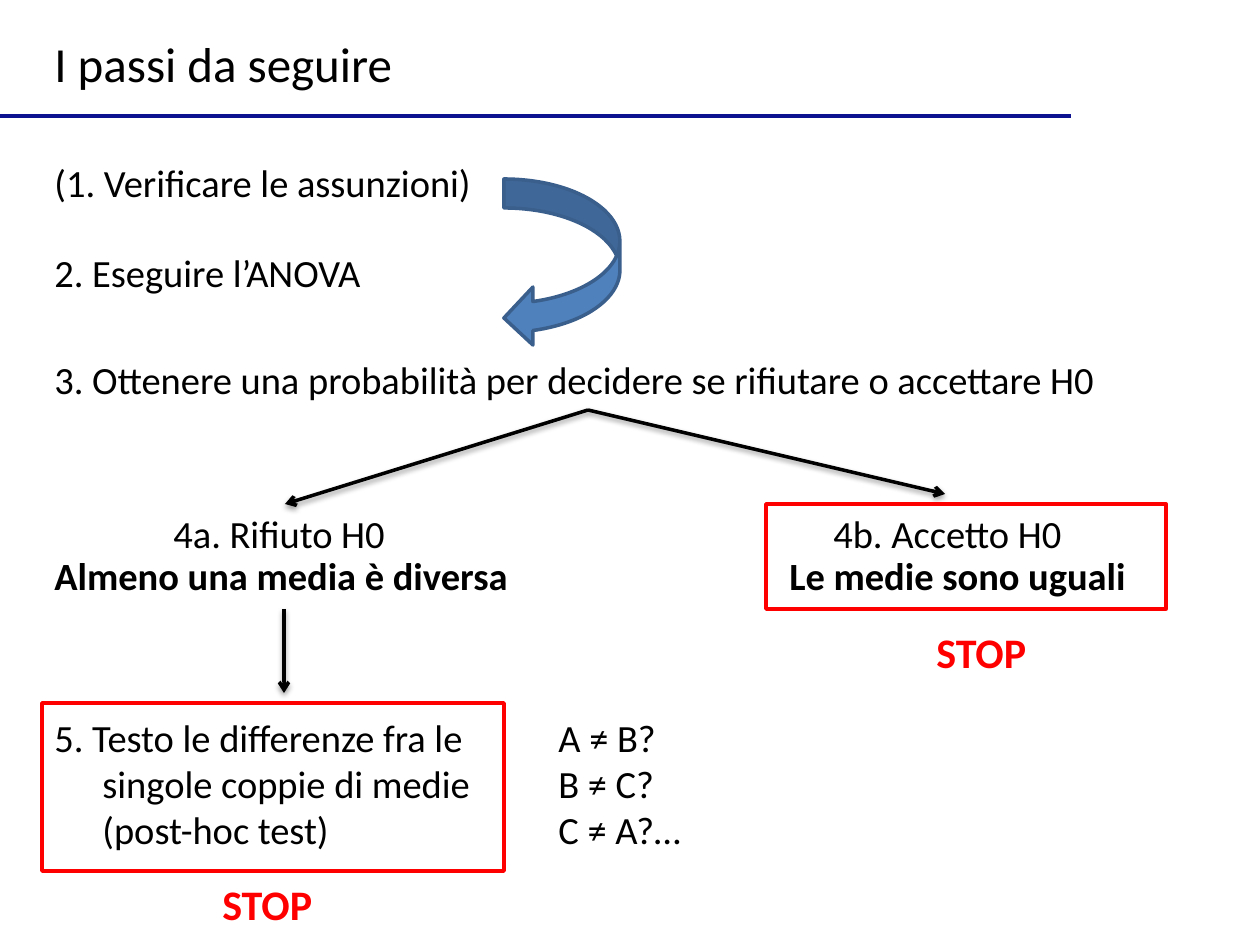
import pptx
import pptx.dml.color
import pptx.enum.shapes
import pptx.enum.text
import pptx.oxml
import pptx.util

PX = 914400 / 126
BLACK, RED, NAVY = "000000", "FF0000", "0C1290"
HANGING = 48
NAMESPACE = 'xmlns:a="http://schemas.openxmlformats.org/drawingml/2006/main"'
NO_EFFECT = f"<a:effectLst {NAMESPACE}/>"
SOFT_SHADOW = (
    f'<a:effectLst {NAMESPACE}>'
    '<a:outerShdw blurRad="40000" dist="20000" dir="5400000" rotWithShape="0">'
    '<a:srgbClr val="000000"><a:alpha val="38000"/></a:srgbClr>'
    '</a:outerShdw></a:effectLst>'
)
ARROWHEAD = f'<a:tailEnd {NAMESPACE} type="arrow"/>'


def px(value):
    return pptx.util.Emu(round(value * PX))


def color(value):
    return pptx.dml.color.RGBColor.from_string(value)


def add_text(slide, box, lines, size=22, hue=BLACK, bold=False, wrap=True,
             hanging=HANGING, middle=False, spacing=None, grow=True):
    frame = slide.shapes.add_textbox(*map(px, box)).text_frame
    frame.word_wrap = wrap
    if grow:
        frame.auto_size = pptx.enum.text.MSO_AUTO_SIZE.SHAPE_TO_FIT_TEXT
    if middle:
        frame.vertical_anchor = pptx.enum.text.MSO_ANCHOR.MIDDLE
    frame.text = lines
    for paragraph in frame.paragraphs:
        font = paragraph.font
        font.name = "Calibri"
        font.size = pptx.util.Pt(size)
        font.bold = bold
        font.color.rgb = color(hue)
        if spacing:
            paragraph.line_spacing = spacing
        if hanging:
            properties = paragraph._p.get_or_add_pPr()
            properties.set("marL", str(px(hanging)))
            properties.set("indent", str(-px(hanging)))


def add_line(slide, start, end, hue):
    line = slide.shapes.add_connector(
        pptx.enum.shapes.MSO_CONNECTOR.STRAIGHT, *map(px, start + end))
    line.line.color.rgb = color(hue)
    line.line.width = pptx.util.Pt(2)
    return line


def add_rule(slide, start, end):
    rule = add_line(slide, start, end, NAVY)
    rule._element.spPr.append(pptx.oxml.parse_xml(NO_EFFECT))


def add_arrow(slide, start, end):
    arrow = add_line(slide, start, end, BLACK)
    arrow.line._get_or_add_ln().append(pptx.oxml.parse_xml(ARROWHEAD))
    arrow._element.spPr.append(pptx.oxml.parse_xml(SOFT_SHADOW))


def add_outline(slide, kind, box, hue):
    shape = slide.shapes.add_shape(kind, *map(px, box))
    shape.shadow.inherit = False
    shape.fill.background()
    shape.line.color.rgb = color(hue)
    shape.line.width = pptx.util.Pt(2)
    return shape


def add_curved_arrow(slide, box):
    shape = add_outline(
        slide, pptx.enum.shapes.MSO_SHAPE.CURVED_RIGHT_ARROW, box, "3A5F8C")
    shape.fill.solid()
    shape.fill.fore_color.rgb = color("4F81BD")
    shape._element.spPr.get_or_add_xfrm().set("flipH", "1")


def main():
    presentation = pptx.Presentation()
    presentation.slide_width, presentation.slide_height = px(1260), px(945)
    slide = presentation.slides.add_slide(presentation.slide_layouts[6])

    add_text(slide, (42, 27, 367, 72), "I passi da seguire", size=28,
             wrap=False, hanging=0, middle=True)
    add_rule(slide, (0, 116), (1071, 116))

    add_text(slide, (42, 158, 1102, 54), "(1. Verificare le assunzioni)",
             hanging=0, middle=True, spacing=0.9)
    add_text(slide, (42, 243, 335, 59), "2. Eseguire l’ANOVA", wrap=False)
    add_text(slide, (42, 350, 1092, 59),
             "3. Ottenere una probabilità per decidere se rifiutare o accettare H0")
    add_curved_arrow(slide, (504, 179, 116, 168))

    fork = (588, 410)
    add_arrow(slide, fork, (285, 504))
    add_arrow(slide, fork, (945, 494))
    add_arrow(slide, (284, 609), (284, 693))

    add_text(slide, (161, 504, 246, 59), "4a. Rifiuto H0", wrap=False)
    add_text(slide, (42, 546, 483, 59), "Almeno una media è diversa", bold=True)
    add_text(slide, (821, 504, 261, 136), "4b. Accetto H0", grow=False)
    add_text(slide, (777, 546, 368, 59), "Le medie sono uguali", bold=True)
    add_text(slide, (42, 708, 462, 152),
             "5. Testo le differenze fra le singole coppie di medie (post-hoc test)")
    add_text(slide, (546, 708, 168, 152), "A ≠ B?\nB ≠ C?\nC ≠ A?…")

    for box in ((766, 504, 400, 105), (42, 703, 462, 168)):
        add_outline(slide, pptx.enum.shapes.MSO_SHAPE.RECTANGLE, box, RED)
    for left, top in ((924, 620), (210, 872)):
        add_text(slide, (left, top, 116, 63), "STOP", size=24, hue=RED,
                 bold=True, wrap=False)

    presentation.save("out.pptx")


if __name__ == "__main__":
    main()
